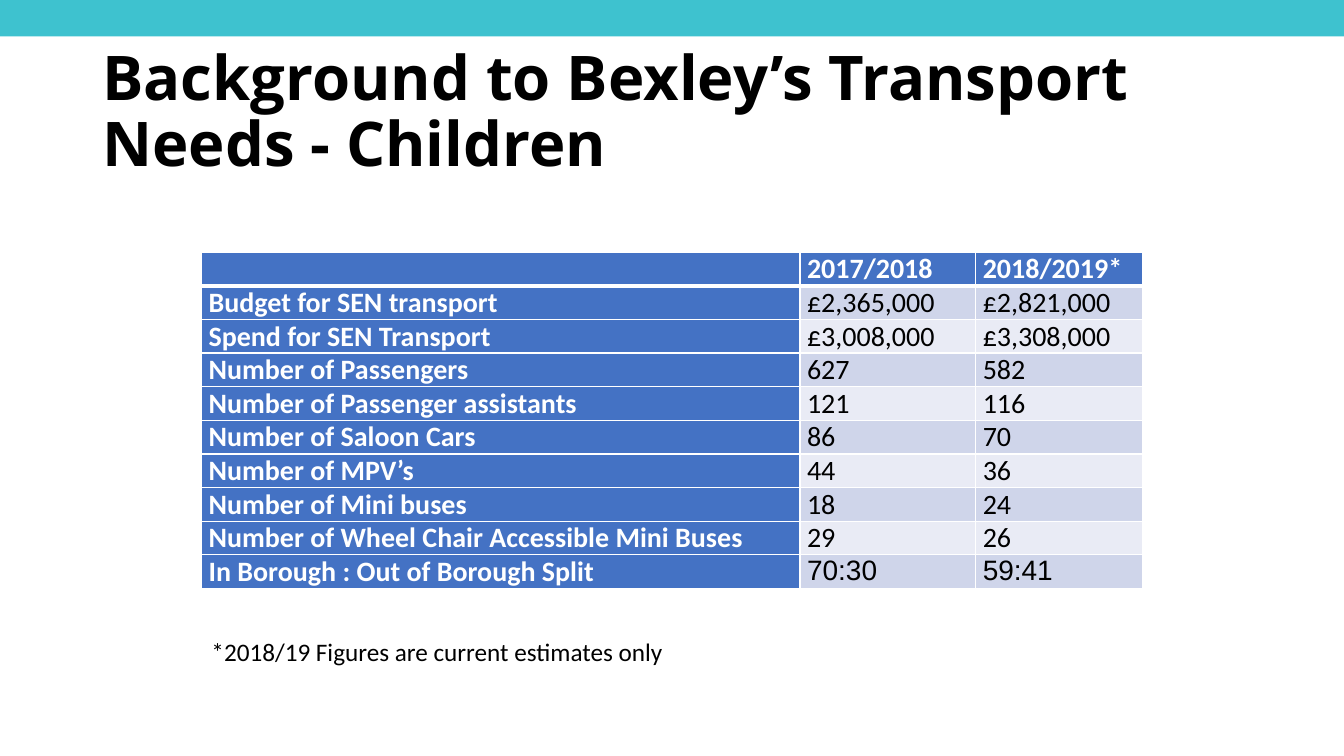
from dataclasses import dataclass

from lxml.etree import SubElement
from pptx import Presentation
from pptx.dml.color import RGBColor as RGB
from pptx.enum.shapes import MSO_SHAPE as SHAPE
from pptx.enum.text import MSO_ANCHOR as ANCHOR, MSO_AUTO_SIZE as AUTO
from pptx.oxml.ns import qn
from pptx.util import Pt


@dataclass(frozen=True)
class Theme:
    band: str = "3EC2CF"
    header: str = "4472C4"
    stripes: tuple[str, str] = ("CFD5EA", "E9EBF5")
    light: str = "FFFFFF"
    dark: str = "000000"
    title_size: float = 44
    table_size: float = 20
    note_size: float = 18
    title_font: str = "Open Sans"
    body_font: str = "Calibri"
    ratio_font: str = "Arial"


@dataclass(frozen=True)
class Box:
    left: float
    top: float
    width: float
    height: float

    def lengths(self) -> tuple:
        return Pt(self.left), Pt(self.top), Pt(self.width), Pt(self.height)


@dataclass(frozen=True)
class TextStyle:
    font: str
    size: float
    color: str
    bold: bool = False


@dataclass(frozen=True)
class Row:
    label: str
    previous: str
    current: str
    font: str = Theme.body_font


THEME = Theme()
COL_WIDTHS = (427.5, 125.5, 119.5)
ROW_HEIGHT = 24
CELL_INSET = 5
ROWS = [
    Row("", "2017/2018", "2018/2019*"),
    Row("Budget for SEN transport", "£2,365,000", "£2,821,000"),
    Row("Spend for SEN Transport", "£3,008,000", "£3,308,000"),
    Row("Number of Passengers", "627", "582"),
    Row("Number of Passenger assistants", "121", "116"),
    Row("Number of Saloon Cars", "86", "70"),
    Row("Number of MPV’s", "44", "36"),
    Row("Number of Mini buses", "18", "24"),
    Row("Number of Wheel Chair Accessible Mini Buses", "29", "26"),
    Row("In Borough : Out of Borough Split", "70:30", "59:41", THEME.ratio_font),
]


def write(p, text: str, style: TextStyle) -> None:
    p.text = text
    p.font.name = style.font
    p.font.size = Pt(style.size)
    p.font.bold = style.bold
    p.font.color.rgb = RGB.from_string(style.color)


def add_text(slide, box: Box, text: str, style: TextStyle):
    tf = slide.shapes.add_textbox(*box.lengths()).text_frame
    write(tf.paragraphs[0], text, style)
    return tf


def set_borders(cell, color: str, bottom: float) -> None:
    tc_pr = cell._tc.get_or_add_tcPr()
    widths = {"a:lnL": 1, "a:lnR": 1, "a:lnT": 1, "a:lnB": bottom}
    for i, (tag, width) in enumerate(widths.items()):
        ln = SubElement(tc_pr, qn(tag), w=str(Pt(width)))
        fill = SubElement(ln, qn("a:solidFill"))
        SubElement(fill, qn("a:srgbClr"), val=color)
        tc_pr.insert(i, ln)


def fill_cell(cell, text: str, fill: str, style: TextStyle, bottom: float) -> None:
    cell.fill.solid()
    cell.fill.fore_color.rgb = RGB.from_string(fill)
    cell.margin_left = cell.margin_right = Pt(CELL_INSET)
    cell.margin_top = cell.margin_bottom = 0
    if text:
        write(cell.text_frame.paragraphs[0], text, style)
    set_borders(cell, THEME.light, bottom)


def add_figures(slide, left: float, top: float) -> None:
    box = Box(left, top, sum(COL_WIDTHS), ROW_HEIGHT * len(ROWS))
    table = slide.shapes.add_table(len(ROWS), len(COL_WIDTHS), *box.lengths()).table
    table.first_col = True
    for column, width in zip(table.columns, COL_WIDTHS):
        column.width = Pt(width)
    for r, row in enumerate(ROWS):
        for c, text in enumerate((row.label, row.previous, row.current)):
            heading = r == 0 or c == 0
            fill = THEME.header if heading else THEME.stripes[(r - 1) % 2]
            style = TextStyle(
                THEME.body_font if heading else row.font,
                THEME.table_size,
                THEME.light if heading else THEME.dark,
                heading,
            )
            fill_cell(table.cell(r, c), text, fill, style, 3 if r == 0 else 1)


def main() -> None:
    prs = Presentation()
    prs.slide_width, prs.slide_height = Pt(960), Pt(540)
    slide = prs.slides.add_slide(prs.slide_layouts[6])

    # Top band
    band = slide.shapes.add_shape(SHAPE.RECTANGLE, *Box(0, 0, 960, 26).lengths())
    band.shadow.inherit = False
    band.fill.solid()
    band.fill.fore_color.rgb = RGB.from_string(THEME.band)
    band.line.fill.background()

    # Title
    title = add_text(
        slide,
        Box(66, 28.8, 828, 104.4),
        "Background to Bexley’s Transport Needs - Children",
        TextStyle(THEME.title_font, THEME.title_size, THEME.dark, True),
    )
    title.word_wrap = True
    title.vertical_anchor = ANCHOR.MIDDLE
    title.paragraphs[0].line_spacing = 0.9

    # Transport figures
    add_figures(slide, 144, 180)

    # Footnote
    note = add_text(
        slide,
        Box(144, 450.7, 340.6, 29),
        "*2018/19 Figures are current estimates only",
        TextStyle(THEME.body_font, THEME.note_size, THEME.dark),
    )
    note.word_wrap = False
    note.auto_size = AUTO.SHAPE_TO_FIT_TEXT

    prs.save("out.pptx")


if __name__ == "__main__":
    main()
